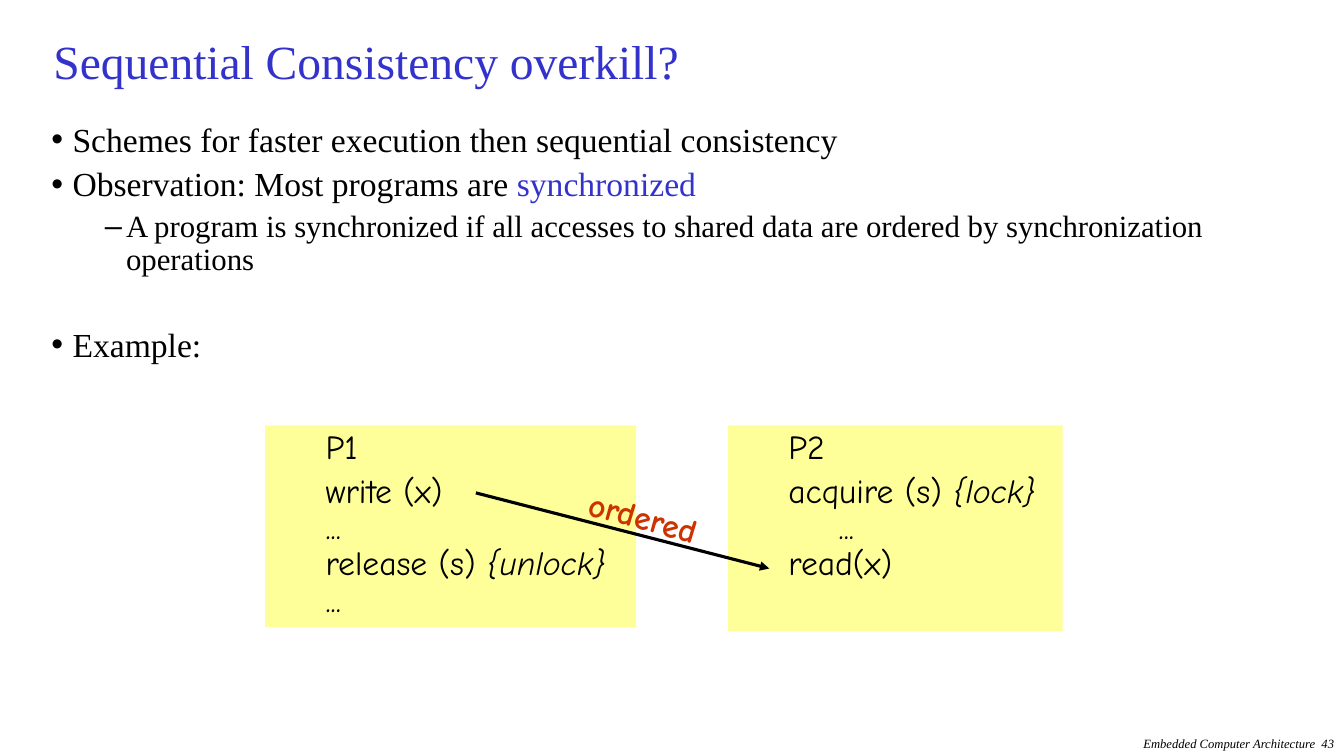
from lxml.etree import SubElement
from pptx import Presentation
from pptx.dml.color import RGBColor
from pptx.enum.shapes import MSO_CONNECTOR, MSO_SHAPE
from pptx.enum.text import MSO_ANCHOR, MSO_AUTO_SIZE, PP_ALIGN
from pptx.oxml.ns import qn
from pptx.util import Inches, Pt

# Content
SERIF, HAND = "Times New Roman", "Comic Neue"
BLACK, BLUE, RED, YELLOW = "000000", "3333CC", "CC3300", "FFFF99"
TITLE = "Sequential Consistency overkill?"
FOOTER = "Embedded Computer Architecture  43"
# level, space before in points, [(text, colour)]
POINTS = [
    (0, 0, [("Schemes for faster execution then sequential consistency", BLACK)]),
    (0, 5.8, [("Observation: Most programs are ", BLACK), ("synchronized", BLUE)]),
    (1, 5.3, [("A program is synchronized if all accesses to shared data are "
               "ordered by synchronization operations", BLACK)]),
    (0, 36, [("Example:", BLACK)]),
]
LEVELS = [("•", 0.21, 24), ("–", 0.74, 22)]  # bullet, text indent, size
HANGING = 0.21
# left, width, height, name, [(text, italic)]
PROCESSES = [
    (2.63, 3.68, 2.0, "P1",
     [("write (x)\n...\nrelease (s) ", False), ("{unlock}\n", True), ("...", False)]),
    (7.22, 3.32, 2.04, "P2",
     [("acquire (s)", False), (" {lock}\n", True), ("\t...\nread(x)", False)]),
]
PROCESS_TOP, PROCESS_INDENT = 4.22, 0.5
ARROW = (4.72, 4.89, 7.63, 5.64)


def color(value):
    return RGBColor.from_string(value)


def write(para, text, size=24, font=SERIF, fill=BLACK, bold=False, italic=False):
    """Add text to a paragraph; each newline becomes a line break."""
    for index, line in enumerate(text.split("\n")):
        if index:
            para.add_line_break()
        if line:
            span = para.add_run()
            span.text = line
            span.font.size, span.font.name = Pt(size), font
            span.font.bold, span.font.italic = bold, italic
            span.font.color.rgb = color(fill)


def place(shape, left, top, width, height):
    shape.left, shape.top = Inches(left), Inches(top)
    shape.width, shape.height = Inches(width), Inches(height)


def frame_of(shape, anchor=MSO_ANCHOR.TOP, wrap=True):
    frame = shape.text_frame
    frame.word_wrap, frame.auto_size = wrap, MSO_AUTO_SIZE.NONE
    frame.vertical_anchor = anchor
    return frame


def next_para(frame, index, before=0, spacing=0.9, align=PP_ALIGN.LEFT):
    para = frame.add_paragraph() if index else frame.paragraphs[0]
    para.alignment, para.line_spacing = align, spacing
    para.space_before = Pt(before)
    return para


def indent(para, left, first=0):
    properties = para._p.get_or_add_pPr()
    properties.set("marL", str(Inches(left)))
    properties.set("indent", str(Inches(first)))
    return properties


def text_box(page, left, top, width, height):
    return page.shapes.add_textbox(
        Inches(left), Inches(top), Inches(width), Inches(height))


deck = Presentation()
deck.slide_width, deck.slide_height = Inches(13.33), Inches(7.5)
page = deck.slides.add_slide(deck.slide_layouts[1])

# Footer
box = text_box(page, 9.5, 7.25, 3.83, 0.25)
para = next_para(frame_of(box), 0, spacing=1.0, align=PP_ALIGN.RIGHT)
write(para, FOOTER, size=9, italic=True)

# Title
title = page.shapes.title
place(title, 0.43, 0.25, 12.46, 0.8)
para = next_para(frame_of(title, MSO_ANCHOR.MIDDLE), 0, spacing=0.8)
write(para, TITLE, size=34, fill=BLUE)

# Bulleted list
body = page.placeholders[1]
place(body, 0.41, 1.17, 12.52, 5.91)
frame = frame_of(body)
for index, (level, before, spans) in enumerate(POINTS):
    bullet, left, size = LEVELS[level]
    para = next_para(frame, index, before)
    para.level = level
    properties = indent(para, left, -HANGING)
    SubElement(properties, qn("a:buChar")).set("char", bullet)
    for text, fill in spans:
        write(para, text, size=size, fill=fill)

# Process boxes
for left, width, height, name, code in PROCESSES:
    box = page.shapes.add_shape(MSO_SHAPE.RECTANGLE, 0, 0, 0, 0)
    place(box, left, PROCESS_TOP, width, height)
    box.shadow.inherit = False
    box.fill.solid()
    box.fill.fore_color.rgb = color(YELLOW)
    box.line.fill.background()
    frame = frame_of(box)
    for index, spans in enumerate([[(name, False)], code]):
        para = next_para(frame, index, before=5.5 * index)
        indent(para, PROCESS_INDENT)
        for text, italic in spans:
            write(para, text, font=HAND, italic=italic)

# Ordering arrow and its label
arrow = page.shapes.add_connector(MSO_CONNECTOR.STRAIGHT, *map(Inches, ARROW))
arrow.line.color.rgb = color(BLACK)
arrow.line.width = Pt(2.25)
SubElement(arrow.line._get_or_add_ln(), qn("a:tailEnd")).set("type", "triangle")
SubElement(arrow._element.spPr, qn("a:effectLst"))

label = text_box(page, 5.73, 4.9, 1.47, 0.5)
label.rotation = 15.3
para = next_para(frame_of(label), 0, spacing=1.0)
write(para, "ordered", font=HAND, fill=RED, bold=True)

deck.save("out.pptx")
